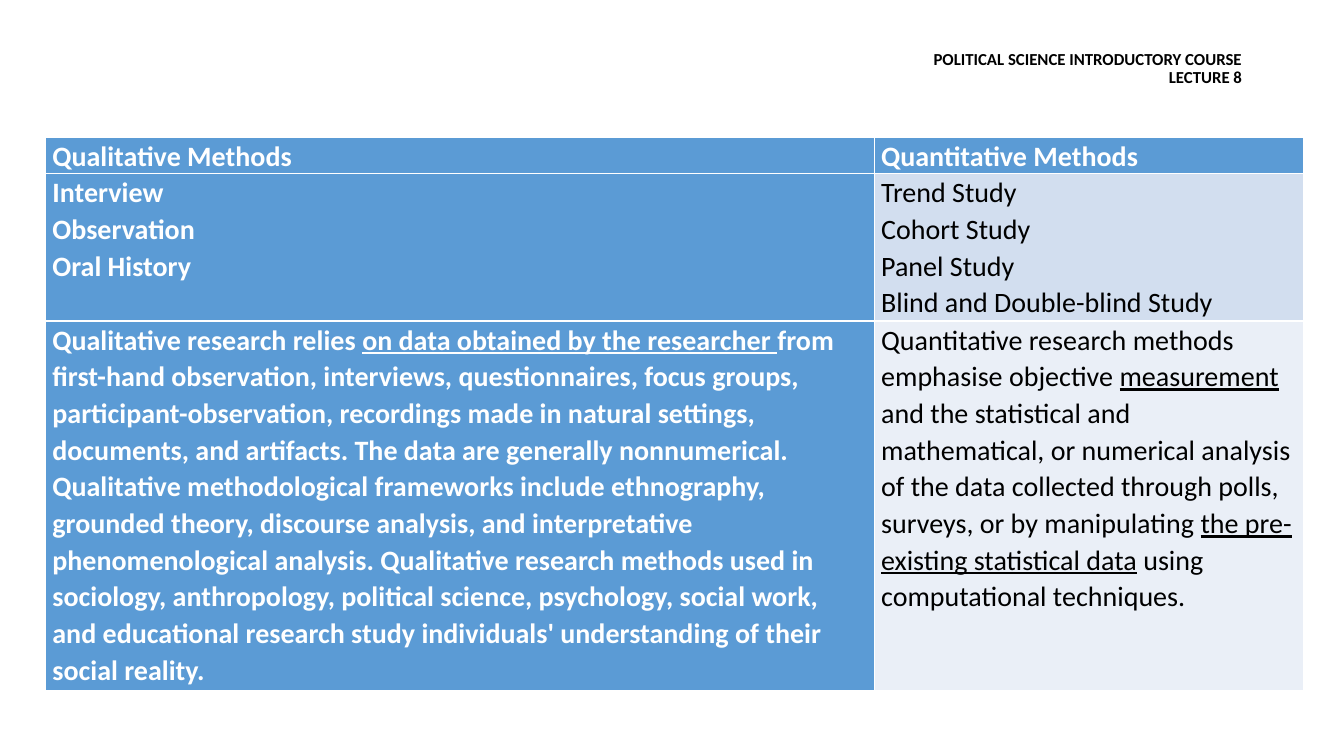
"""Build a slide that compares qualitative and quantitative methods."""
from pptx import Presentation
from pptx.dml.color import RGBColor
from pptx.enum.text import MSO_ANCHOR, PP_ALIGN
from pptx.util import Inches, Pt

LEFT, RIGHT = PP_ALIGN.LEFT, PP_ALIGN.RIGHT
TOP, MIDDLE = MSO_ANCHOR.TOP, MSO_ANCHOR.MIDDLE
WHITE, BLACK, BLUE = "FFFFFF", "000000", "5B9BD5"


def color(code):
    return RGBColor.from_string(code)


def write(frame, text, size=20, ink=BLACK, bold=False, align=LEFT, space=1.07):
    """Write one paragraph per line, underlining the parts between underscores."""
    for i, line in enumerate(text.split("\n")):
        para = frame.paragraphs[0] if i == 0 else frame.add_paragraph()
        para.alignment = align
        para.line_spacing = space
        for j, part in enumerate(line.split("_")):
            run = para.add_run()
            run.text = part
            font = run.font
            font.name = "Calibri"
            font.size = Pt(size)
            font.bold = bold
            font.underline = j % 2 == 1
            font.color.rgb = color(ink)


deck = Presentation()
deck.slide_width = Inches(13.33)
deck.slide_height = Inches(7.5)
slide = deck.slides.add_slide(deck.slide_layouts[5])

title = slide.shapes.title
title.left, title.top = Inches(0.92), Inches(0.4)
title.width, title.height = Inches(11.5), Inches(0.57)
title.text_frame.vertical_anchor = MIDDLE
write(title.text_frame, "POLITICAL SCIENCE INTRODUCTORY COURSE\nLECTURE 8",
      size=12, bold=True, align=RIGHT, space=0.9)

rows = [
    ("Qualitative Methods", "Quantitative Methods"),
    ("Interview\nObservation\nOral History",
     "Trend Study\nCohort Study\nPanel Study\nBlind and Double-blind Study"),
    ("Qualitative research relies _on data obtained by the researcher _from "
     "first-hand observation, interviews, questionnaires, focus groups, "
     "participant-observation, recordings made in natural settings, "
     "documents, and artifacts. The data are generally nonnumerical. "
     "Qualitative methodological frameworks include ethnography, "
     "grounded theory, discourse analysis, and interpretative "
     "phenomenological analysis. Qualitative research methods used in "
     "sociology, anthropology, political science, psychology, social work, "
     "and educational research study individuals' understanding of their "
     "social reality.",
     "Quantitative research methods emphasise objective _measurement_ and "
     "the statistical and mathematical, or numerical analysis of the data "
     "collected through polls, surveys, or by manipulating _the pre-existing "
     "statistical data_ using computational techniques."),
]
fills = [(BLUE, BLUE), (BLUE, "D2DEEF"), (BLUE, "EAEFF7")]
widths = [8.22, 4.26]
heights = [0.35, 1.46, 3.67]

table = slide.shapes.add_table(
    len(rows), len(widths), Inches(0.45), Inches(1.36),
    Inches(sum(widths)), Inches(sum(heights))).table
table.first_col = True
for c, width in enumerate(widths):
    table.columns[c].width = Inches(width)
for r, height in enumerate(heights):
    table.rows[r].height = Inches(height)
    for c, text in enumerate(rows[r]):
        cell = table.cell(r, c)
        cell.margin_left = cell.margin_right = Inches(0.07)
        cell.margin_top = cell.margin_bottom = 0
        cell.vertical_anchor = TOP
        cell.fill.solid()
        cell.fill.fore_color.rgb = color(fills[r][c])
        head = fills[r][c] == BLUE
        write(cell.text_frame, text, ink=WHITE if head else BLACK, bold=head)

deck.save("out.pptx")
